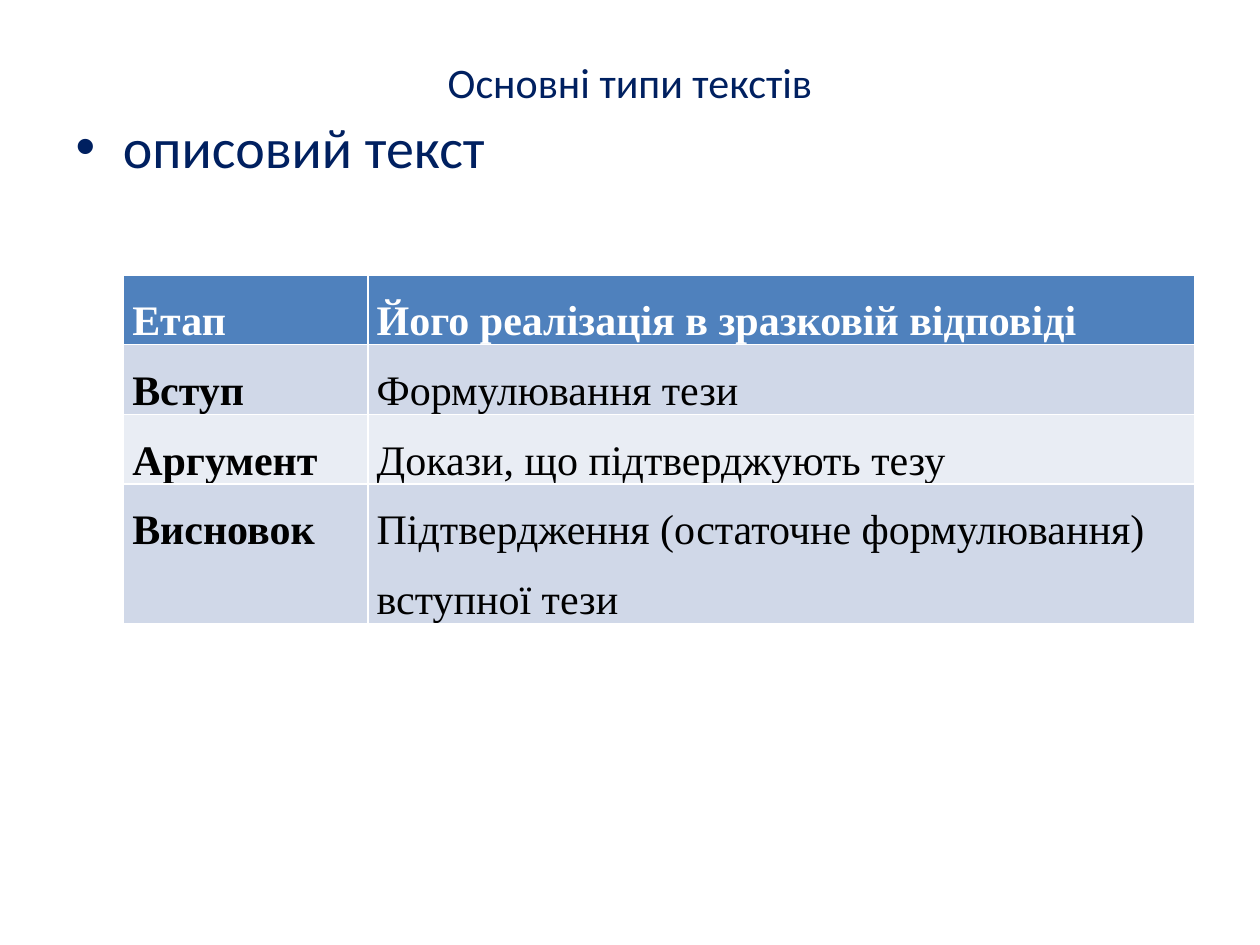
from dataclasses import dataclass

from pptx import Presentation
from pptx.dml.color import RGBColor
from pptx.enum.text import MSO_ANCHOR, PP_ALIGN
from pptx.util import Inches, Pt

CENTER = PP_ALIGN.CENTER
LEFT = PP_ALIGN.LEFT
MIDDLE = MSO_ANCHOR.MIDDLE
TOP = MSO_ANCHOR.TOP

COLORS = {
    "navy": "002060",
    "white": "FFFFFF",
    "black": "000000",
    "header": "4F81BD",
    "band_dark": "D0D8E8",
    "band_light": "E9EDF4",
}
SLIDE_WIDTH = Inches(10)
SLIDE_HEIGHT = Inches(7.5)
COLUMN_WIDTHS = (Inches(1.94), Inches(6.56))
ROW_HEIGHT = Inches(0.41)
CELL_MARGIN = Inches(0.07)


@dataclass(frozen=True)
class Area:
    left: float
    top: float
    width: float
    height: float


@dataclass(frozen=True)
class Stage:
    name: str
    content: str


TITLE_AREA = Area(0.05, 0.04, 0.9, 0.092)
BODY_AREA = Area(0.05, 0.112, 0.9, 0.781)
TABLE_LEFT = 0.098
TABLE_TOP = 0.291

STAGES = (
    Stage("Етап", "Його реалізація в зразковій відповіді"),
    Stage("Вступ", "Формулювання тези"),
    Stage("Аргумент", "Докази, що підтверджують тезу"),
    Stage("Висновок", "Підтвердження (остаточне формулювання) вступної тези"),
)


def write_text(frame, text: str, *, size: int, font: str, color: str,
               bold: bool = False, align=LEFT, line_spacing: float | None = None) -> None:
    para = frame.paragraphs[0]
    para.alignment = align
    para.line_spacing = line_spacing
    span = para.add_run()
    span.text = text
    span.font.size = Pt(size)
    span.font.name = font
    span.font.bold = bold
    span.font.color.rgb = RGBColor.from_string(COLORS[color])


def place(box, area: Area, anchor) -> None:
    box.left = round(area.left * SLIDE_WIDTH)
    box.top = round(area.top * SLIDE_HEIGHT)
    box.width = round(area.width * SLIDE_WIDTH)
    box.height = round(area.height * SLIDE_HEIGHT)
    box.text_frame.vertical_anchor = anchor


def fill_cell(cell, text: str, *, fill: str, color: str, bold: bool) -> None:
    cell.fill.solid()
    cell.fill.fore_color.rgb = RGBColor.from_string(COLORS[fill])
    cell.margin_left = cell.margin_right = CELL_MARGIN
    cell.margin_top = cell.margin_bottom = 0
    write_text(cell.text_frame, text, size=24, font="Times New Roman",
               color=color, bold=bold, line_spacing=1.5)


def draw_stages(page, stages: tuple[Stage, ...]) -> None:
    table = page.shapes.add_table(
        len(stages), len(COLUMN_WIDTHS),
        round(TABLE_LEFT * SLIDE_WIDTH), round(TABLE_TOP * SLIDE_HEIGHT),
        sum(COLUMN_WIDTHS), ROW_HEIGHT * len(stages),
    ).table
    for column, width in zip(table.columns, COLUMN_WIDTHS):
        column.width = width
    for row, stage in enumerate(stages):
        header = row == 0
        band = "band_dark" if row % 2 else "band_light"
        for column, text in enumerate((stage.name, stage.content)):
            fill_cell(table.cell(row, column), text,
                      fill="header" if header else band,
                      color="white" if header else "black",
                      bold=header or column == 0)


def main() -> None:
    deck = Presentation()
    deck.slide_width = SLIDE_WIDTH
    deck.slide_height = SLIDE_HEIGHT
    page = deck.slides.add_slide(deck.slide_layouts[1])
    title = page.shapes.title
    body = page.placeholders[1]
    place(title, TITLE_AREA, MIDDLE)
    write_text(title.text_frame, "Основні типи текстів",
               size=24, font="Calibri", color="navy", align=CENTER)
    place(body, BODY_AREA, TOP)
    write_text(body.text_frame, "описовий текст",
               size=32, font="Calibri", color="navy")
    draw_stages(page, STAGES)
    deck.save("out.pptx")


if __name__ == "__main__":
    main()
